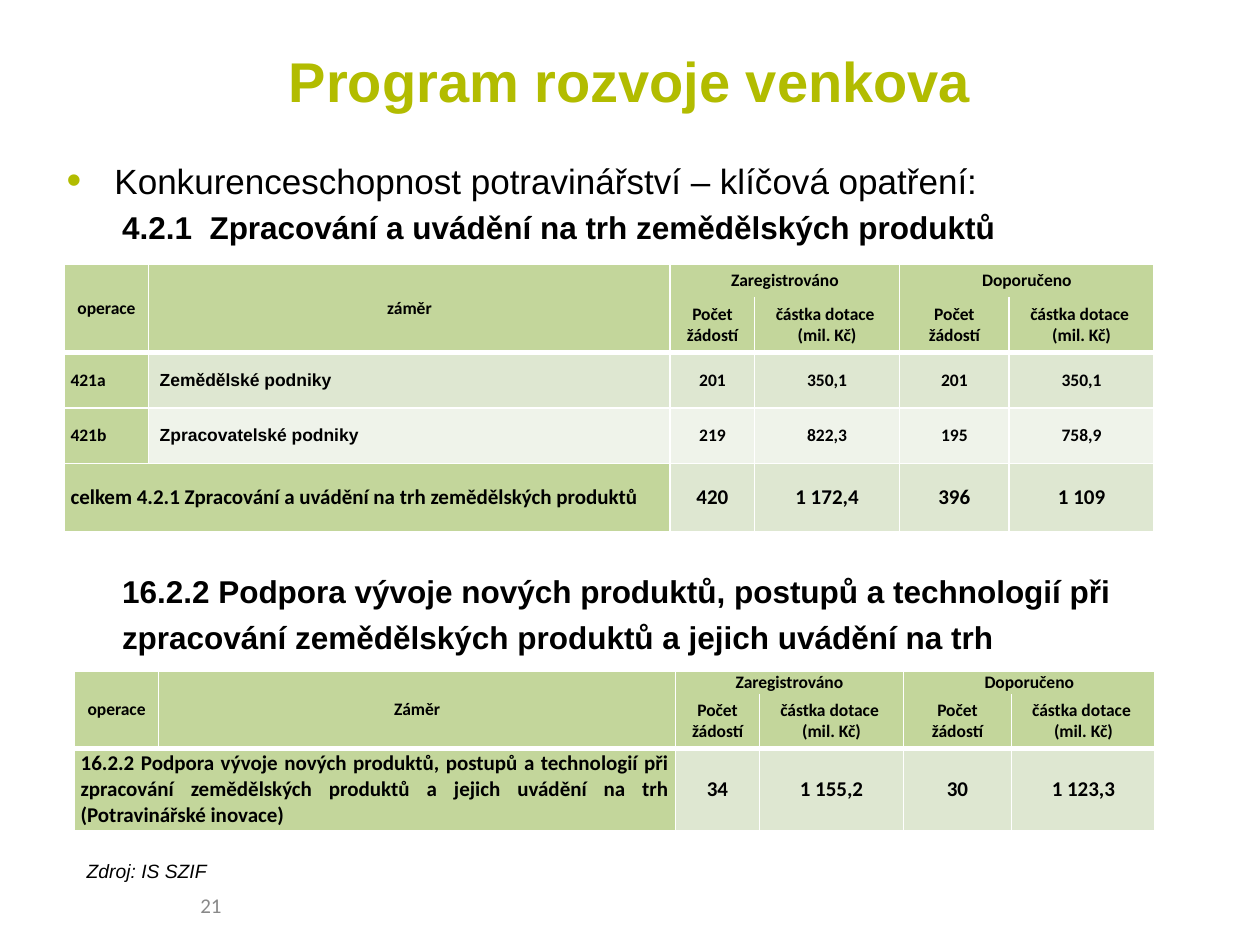
import pptx
import pptx.dml.color
import pptx.enum.text
import pptx.oxml.ns
import pptx.util
from lxml import etree

Inches = pptx.util.Inches
Pt = pptx.util.Pt
ALIGN = pptx.enum.text.PP_ALIGN
MIDDLE = pptx.enum.text.MSO_ANCHOR.MIDDLE

COLORS = {"lime": "B2BC00", "text": "000000", "number": "898989", "white": "FFFFFF",
          "header": "C3D69B", "band": "DEE7D1", "light": "EFF3EA"}

HEADER_SPANS = [(0, 0, 1, 0), (0, 1, 1, 1), (0, 2, 0, 3), (0, 4, 0, 5)]
MEASURES = ["Počet\nžádostí", "částka dotace \n(mil. Kč)"] * 2


def header_rows(aim):
    return [["operace", aim, "Zaregistrováno", None, "Doporučeno", None],
            [None, None] + MEASURES]


def add_element(parent, tag, **attributes):
    return etree.SubElement(parent, pptx.oxml.ns.qn(tag), attributes)


class SlideBuilder:
    def __init__(self, slide):
        self.slide = slide

    def style(self, paragraph, size, font="Arial", color="text", align=ALIGN.LEFT, **extra):
        paragraph.alignment = align
        values = {"size": Pt(size), "name": font, **extra}
        for run in paragraph.runs:
            for name, value in values.items():
                setattr(run.font, name, value)
            run.font.color.rgb = pptx.dml.color.RGBColor.from_string(COLORS[color])

    def text(self, box, lines, anchor=None, **format_values):
        frame = self.slide.shapes.add_textbox(*map(Inches, box)).text_frame
        frame.word_wrap = True
        if anchor is not None:
            frame.vertical_anchor = anchor
        frame.text = "\n".join(lines)
        for paragraph in frame.paragraphs:
            self.style(paragraph, **format_values)
        return frame.paragraphs

    def indent(self, paragraph, left, hanging=0):
        properties = paragraph._p.get_or_add_pPr()
        properties.set("marL", str(Inches(left)))
        properties.set("indent", str(-Inches(hanging)))

    def bullet(self, paragraph):
        properties = paragraph._p.get_or_add_pPr()
        add_element(add_element(properties, "a:buClr"), "a:srgbClr", val=COLORS["lime"])
        add_element(properties, "a:buSzPct", val="120000")
        add_element(properties, "a:buFont", typeface="Arial")
        add_element(properties, "a:buChar", char="•")

    def borders(self, cell, widths):
        """Draw white left, right, top and bottom borders; width 0 means no line."""
        properties = cell._tc.get_or_add_tcPr()
        for position, (side, width) in enumerate(zip("LRTB", widths)):
            line = etree.Element(pptx.oxml.ns.qn(f"a:ln{side}"), w=str(Pt(width)))
            if width:
                add_element(add_element(line, "a:solidFill"), "a:srgbClr", val=COLORS["white"])
            else:
                add_element(line, "a:noFill")
            properties.insert(position, line)

    def table(self, left, top, widths, heights, rows):
        """Build a table with two header rows and a total in the last row."""
        last = len(rows) - 1
        box = map(Inches, (left, top, sum(widths), sum(heights)))
        table = self.slide.shapes.add_table(len(rows), len(widths), *box).table
        table.first_row = table.horz_banding = False
        for column, width in zip(table.columns, widths):
            column.width = Inches(width)
        for row, height in zip(table.rows, heights):
            row.height = Inches(height)
        for r, row in enumerate(rows):
            for c, content in enumerate(row):
                self.cell(table.cell(r, c), r, c, content, r == last)
        for r1, c1, r2, c2 in HEADER_SPANS + [(last, 0, last, 1)]:
            table.cell(r1, c1).merge(table.cell(r2, c2))

    def cell(self, cell, r, c, content, is_total):
        in_header = r < 2
        side_margin = Inches(0.01 if in_header else 0.05)
        values = {"margin_left": side_margin, "margin_right": side_margin,
                  "margin_top": 0, "margin_bottom": 0, "vertical_anchor": MIDDLE}
        for name, value in values.items():
            setattr(cell, name, value)

        is_label = c == 0 or (is_total and c == 1)
        fill = "header" if in_header or is_label else "light" if r == 3 else "band"
        cell.fill.solid()
        cell.fill.fore_color.rgb = pptx.dml.color.RGBColor.from_string(COLORS[fill])

        top = {1: 0, 2: 3}.get(r, 1)
        bottom = {0: 3 if c < 2 else 0, 1: 3}.get(r, 1)
        self.borders(cell, (1, 1, top, bottom))

        if content is None:
            return
        cell.text = content
        if in_header or c > 1:
            align = ALIGN.CENTER
        else:
            align = ALIGN.JUSTIFY if is_total or c == 1 else ALIGN.LEFT
        font = "Arial" if c == 1 and not in_header else "Calibri"
        for paragraph in cell.text_frame.paragraphs:
            self.style(paragraph, 12 if is_total else 10, font, align=align, bold=True)


def main():
    presentation = pptx.Presentation()
    presentation.slide_width, presentation.slide_height = Inches(10), Inches(7.5)
    page = SlideBuilder(presentation.slides.add_slide(presentation.slide_layouts[6]))

    page.text((0.5, 0.13, 9, 1.01), ["Program rozvoje venkova"], MIDDLE,
              size=32, color="lime", align=ALIGN.CENTER, bold=True)

    topic, processing, innovation = page.text(
        (0.43, 1.15, 9.21, 6.06),
        ["Konkurenceschopnost potravinářství – klíčová opatření:",
         "4.2.1  Zpracování a uvádění na trh zemědělských produktů",
         "16.2.2 Podpora vývoje nových produktů, postupů a technologií při "
         "zpracování zemědělských produktů a jejich uvádění na trh"],
        size=18, bold=True)
    page.style(topic, 20, bold=False)
    page.indent(topic, 0.38, 0.38)
    page.bullet(topic)
    topic.line_spacing = innovation.line_spacing = 1.2
    for measure, gap in ((processing, 4), (innovation, 182)):
        page.indent(measure, 0.44)
        measure.space_before = Pt(gap)

    page.table(
        0.51, 2.1, [0.67, 4.14, 0.67, 1.15, 0.87, 1.15], [0.26, 0.44, 0.44, 0.44, 0.54],
        header_rows("záměr") + [
            ["421a", " Zemědělské podniky", "201", "350,1", "201", "350,1"],
            ["421b", " Zpracovatelské podniky", "219", "822,3", "195", "758,9"],
            ["celkem 4.2.1 Zpracování a uvádění na trh zemědělských produktů", None,
             "420", "1 172,4", "396", "1 109"]])
    page.table(
        0.59, 5.33, [0.67, 4.1, 0.67, 1.14, 0.86, 1.14], [0.18, 0.43, 0.65],
        header_rows("Záměr") + [
            ["16.2.2 Podpora vývoje nových produktů, postupů a technologií při "
             "zpracování zemědělských produktů a jejich uvádění na trh "
             "(Potravinářské inovace)", None, "34", "1 155,2", "30", "1 123,3"]])

    page.text((0.59, 6.77, 1.57, 0.29), ["Zdroj: IS SZIF"], size=11, italic=True)
    page.text((0.51, 6.98, 2.33, 0.4), ["21"], MIDDLE,
              size=12, font="Calibri", color="number", align=ALIGN.CENTER)

    presentation.save("out.pptx")


if __name__ == "__main__":
    main()
